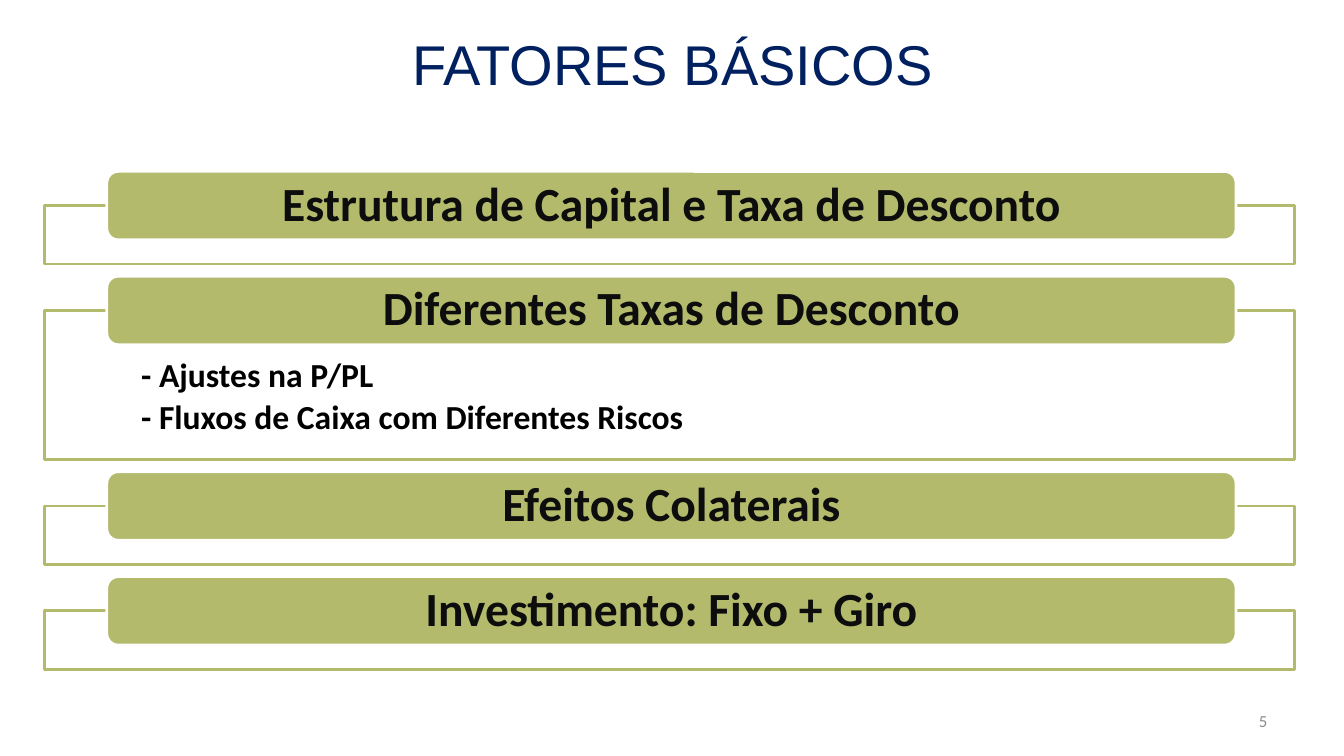
"""Build the FATORES BÁSICOS slide: four framed headings, one with a list."""
from dataclasses import dataclass
from typing import Any

from lxml.etree import SubElement
from pptx import Presentation
from pptx.dml.color import RGBColor
from pptx.enum.shapes import MSO_SHAPE
from pptx.enum.text import MSO_ANCHOR, MSO_AUTO_SIZE, PP_ALIGN
from pptx.oxml.ns import qn
from pptx.util import Inches, Pt


@dataclass(frozen=True)
class Theme:
    navy: RGBColor = RGBColor(0x00, 0x20, 0x60)
    olive: RGBColor = RGBColor(0xB3, 0xBA, 0x6C)
    white: RGBColor = RGBColor(0xFF, 0xFF, 0xFF)
    black: RGBColor = RGBColor(0x00, 0x00, 0x00)
    ink: RGBColor = RGBColor(0x0D, 0x0D, 0x0D)
    gray: RGBColor = RGBColor(0x8C, 0x8C, 0x8C)
    title_font: str = "Arial"
    body_font: str = "Calibri"
    title_size: int = 40
    heading_size: int = 34
    item_size: int = 24
    number_size: int = 12
    line_width: int = 2


@dataclass(frozen=True)
class Factor:
    heading: str
    items: tuple[str, ...] = ()

    @property
    def frame_height(self) -> float:
        return 1.48 if self.items else 0.58


THEME = Theme()
FACTORS = (
    Factor("Estrutura de Capital e Taxa de Desconto"),
    Factor("Diferentes Taxas de Desconto",
           ("- Ajustes na P/PL", "- Fluxos de Caixa com Diferentes Riscos")),
    Factor("Efeitos Colaterais"),
    Factor("Investimento: Fixo + Giro"),
)
FRAME_LEFT, FRAME_WIDTH, FRAME_TOP, FRAME_GAP = 0.44, 12.4, 2.04, 0.46
HEADING_LEFT, HEADING_WIDTH, HEADING_HEIGHT = 1.06, 11.2, 0.68


def apply_format(target: Any, values: dict[str, Any]) -> None:
    for name, value in values.items():
        setattr(target, name, value)


def place(shape: Any, left: float, top: float, width: float, height: float) -> None:
    box = {"left": left, "top": top, "width": width, "height": height}
    apply_format(shape, {name: Inches(value) for name, value in box.items()})


def paint(shape: Any, fill: RGBColor, line: RGBColor) -> None:
    shape.shadow.inherit = False
    shape.fill.solid()
    shape.fill.fore_color.rgb = fill
    shape.line.color.rgb = line
    shape.line.width = Pt(THEME.line_width)


def set_frame(shape: Any, anchor: MSO_ANCHOR, side: float = 0.1,
              top: float = 0.05, bottom: float = 0.05) -> None:
    apply_format(shape.text_frame, {
        "word_wrap": True, "auto_size": MSO_AUTO_SIZE.NONE, "vertical_anchor": anchor,
        "margin_left": Inches(side), "margin_right": Inches(side),
        "margin_top": Inches(top), "margin_bottom": Inches(bottom)})


def set_paragraph(paragraph: Any, text: str, size: int, color: RGBColor,
                  align: PP_ALIGN, font: str = THEME.body_font, bold: bool = False,
                  spacing: float = 1.0, after: float = 0) -> None:
    paragraph.text = text
    apply_format(paragraph, {"alignment": align, "line_spacing": spacing,
                             "space_before": Pt(0), "space_after": Pt(after)})
    apply_format(paragraph.font, {"name": font, "size": Pt(size), "bold": bold})
    paragraph.font.color.rgb = color


def fill_list(body: Any, items: tuple[str, ...]) -> None:
    set_frame(body, MSO_ANCHOR.TOP, 0.96, 0.48, 0.19)
    frame = body.text_frame
    for index, item in enumerate(items):
        paragraph = frame.add_paragraph() if index else frame.paragraphs[0]
        paragraph.level = 1
        properties = paragraph._p.get_or_add_pPr()
        properties.set("marL", str(Inches(0.25)))
        properties.set("indent", str(-Inches(0.25)))
        SubElement(properties, qn("a:buNone"))
        set_paragraph(paragraph, item, THEME.item_size, THEME.black, PP_ALIGN.LEFT,
                      bold=True, spacing=0.9, after=3.6)


def draw_factor(slide: Any, factor: Factor, top: float) -> None:
    if factor.items:
        outline = slide.placeholders[1]
        fill_list(outline, factor.items)
    else:
        outline = slide.shapes.add_shape(MSO_SHAPE.RECTANGLE, 0, 0, 0, 0)
    place(outline, FRAME_LEFT, top, FRAME_WIDTH, factor.frame_height)
    paint(outline, THEME.white, THEME.olive)

    heading = slide.shapes.add_shape(MSO_SHAPE.ROUNDED_RECTANGLE, 0, 0, 0, 0)
    place(heading, HEADING_LEFT, top - HEADING_HEIGHT / 2, HEADING_WIDTH, HEADING_HEIGHT)
    paint(heading, THEME.olive, THEME.white)
    set_frame(heading, MSO_ANCHOR.MIDDLE, 0.36, 0, 0)
    set_paragraph(heading.text_frame.paragraphs[0], factor.heading, THEME.heading_size,
                  THEME.ink, PP_ALIGN.CENTER, bold=True, spacing=0.9)


def main() -> None:
    presentation = Presentation()
    presentation.slide_width, presentation.slide_height = Inches(13.33), Inches(7.5)
    slide = presentation.slides.add_slide(presentation.slide_layouts[1])

    title = slide.shapes.title
    place(title, 0.67, 0, 12, 1.25)
    set_frame(title, MSO_ANCHOR.MIDDLE)
    set_paragraph(title.text_frame.paragraphs[0], "FATORES BÁSICOS", THEME.title_size,
                  THEME.navy, PP_ALIGN.CENTER, THEME.title_font)

    top = FRAME_TOP
    for factor in FACTORS:
        draw_factor(slide, factor, top)
        top += factor.frame_height + FRAME_GAP

    number = slide.shapes.add_textbox(0, 0, 0, 0)
    place(number, 9.56, 6.95, 3.11, 0.4)
    set_frame(number, MSO_ANCHOR.MIDDLE)
    set_paragraph(number.text_frame.paragraphs[0], "5", THEME.number_size,
                  THEME.gray, PP_ALIGN.RIGHT)

    presentation.save("out.pptx")


if __name__ == "__main__":
    main()
